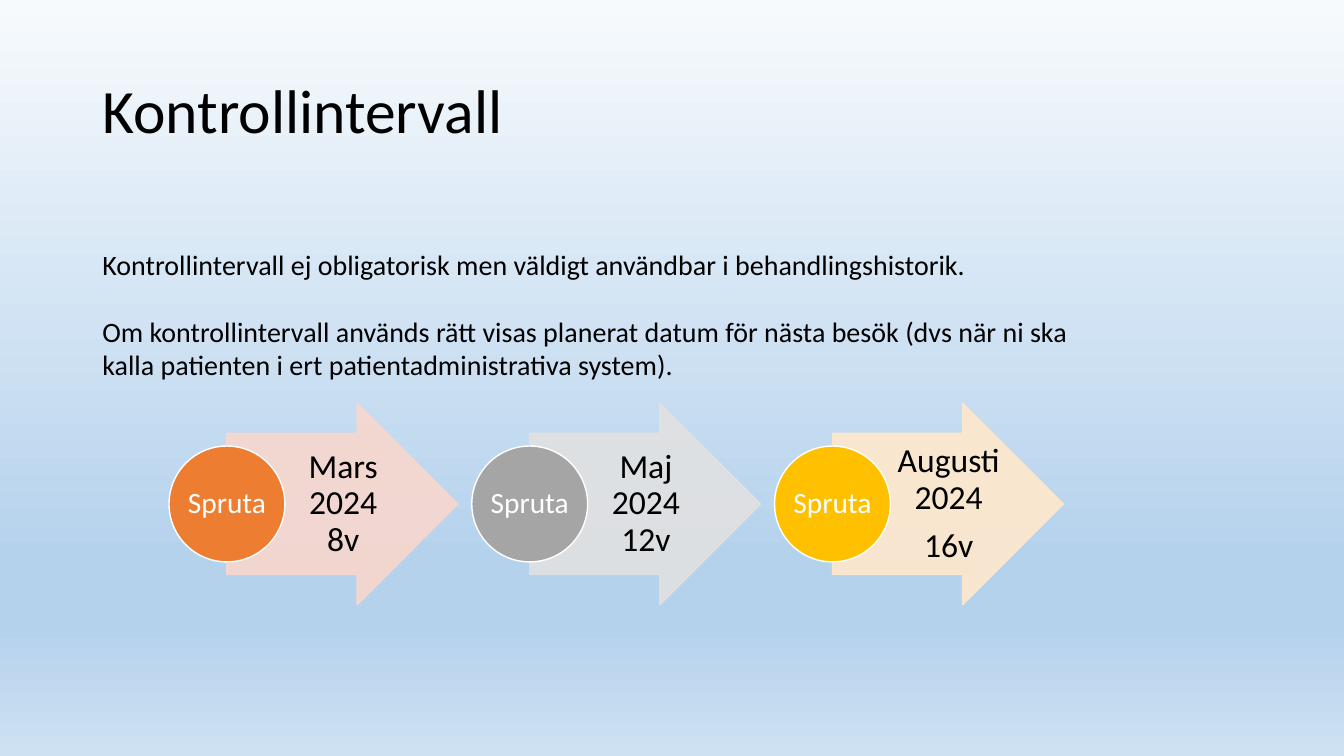
import pptx
import pptx.util
import pptx.dml.color
import pptx.enum.shapes
import pptx.enum.text
import pptx.oxml
import pptx.oxml.ns

Cm, Pt = pptx.util.Cm, pptx.util.Pt
Shape = pptx.enum.shapes.MSO_SHAPE
Anchor = pptx.enum.text.MSO_ANCHOR
Align = pptx.enum.text.PP_ALIGN

TITLE = ["Kontrollintervall"]
BODY = [
    "Kontrollintervall ej obligatorisk men väldigt användbar i behandlingshistorik.",
    "Om kontrollintervall används rätt visas planerat datum för nästa besök "
    "(dvs när ni ska kalla patienten i ert patientadministrativa system).",
]
# paragraphs, arrow colour, circle colour
VISITS = [
    (["Mars 2024\n8v"], "F8D7CE", "ED7D31"),
    (["Maj 2024\n12v"], "E1E1E1", "A5A5A5"),
    (["Augusti 2024", "16v"], "FFE8CC", "FFC000"),
]
BADGE = ["Spruta"]

THEME = {
    "font": "Calibri",
    "ink": "000000",
    "light": "FFFFFF",
    "title": 44,
    "body": 20,
    "visit": 24,
    "badge": 21,
    "alpha": 90,
    "sky": [(0, "F7FAFD"), (74, "B5D2EC"), (83, "B5D2EC"), (100, "CEE1F2")],
}

# centimetres
LEFT, PITCH, MIDDLE = 5.72, 7.63, 12.7
ARROW = (5.82, 5.08)
LABEL = (2.85, 3.56)
ROUND = 2.92
INNER = 2.06


def rgb(code):
    return pptx.dml.color.RGBColor.from_string(code)


def assign(item, values):
    for name, value in values.items():
        setattr(item, name, value)


def paint(slide):
    """Fill the background with the vertical sky gradient."""
    fill = slide.background.fill
    fill.gradient()
    fill.gradient_angle = 270
    stops = slide.element.find(".//" + pptx.oxml.ns.qn("a:gsLst"))
    for stop in list(stops):
        stops.remove(stop)
    for place, code in THEME["sky"]:
        stops.append(pptx.oxml.parse_xml(
            f'<a:gs {pptx.oxml.ns.nsdecls("a")} pos="{place * 1000}">'
            f'<a:srgbClr val="{code}"/></a:gs>'))


def write(slide, box, lines, size, color="ink", frame=None, para=None):
    """Add a text box with one paragraph per line."""
    text = slide.shapes.add_textbox(*map(Cm, box)).text_frame
    assign(text, {"word_wrap": True, **(frame or {})})
    for index, line in enumerate(lines):
        item = text.paragraphs[0] if index == 0 else text.add_paragraph()
        item.text = line
        assign(item, para or {})
        for run in item.runs:
            assign(run.font, {"name": THEME["font"], "size": Pt(THEME[size])})
            run.font.color.rgb = rgb(THEME[color])
    return text


def draw(slide, kind, box, fill, line):
    shape = slide.shapes.add_shape(kind, *map(Cm, box))
    shape.shadow.inherit = False
    shape.fill.solid()
    shape.fill.fore_color.rgb = rgb(fill)
    shape.line.color.rgb = rgb(line)
    shape.line.width = Pt(1)
    return shape


def fade(shape):
    """Make fill and line slightly transparent."""
    for color in shape.element.spPr.iter(pptx.oxml.ns.qn("a:srgbClr")):
        color.append(pptx.oxml.parse_xml(
            f'<a:alpha {pptx.oxml.ns.nsdecls("a")} val="{THEME["alpha"] * 1000}"/>'))


def inset(left, top, right, bottom):
    names = ("margin_left", "margin_top", "margin_right", "margin_bottom")
    sides = dict(zip(names, map(Cm, (left, top, right, bottom))))
    return {"vertical_anchor": Anchor.MIDDLE, **sides}


def center(x, wide, high):
    """Box at x, centred on the row of arrows."""
    return x, MIDDLE - high / 2, wide, high


def visit(slide, x, lines, pale, strong):
    arrow = draw(slide, Shape.RIGHT_ARROW, center(x, *ARROW), pale, pale)
    arrow.adjustments[0] = 0.7
    arrow.adjustments[1] = 0.5
    fade(arrow)
    para = {"alignment": Align.CENTER, "line_spacing": 0.9, "space_after": Pt(8.4)}
    write(slide, center(x + ROUND / 2, *LABEL), lines, "visit",
          frame=inset(0.17, 0.04, 0.08, 0.04), para=para)
    draw(slide, Shape.OVAL, center(x - ROUND / 2, ROUND, ROUND), strong, THEME["light"])
    write(slide, center(x - INNER / 2, INNER, INNER), BADGE, "badge", "light",
          inset(0.03, 0.03, 0.03, 0.03), para)


def main():
    deck = pptx.Presentation()
    assign(deck, {"slide_width": Cm(33.87), "slide_height": Cm(19.05)})
    slide = deck.slides.add_slide(deck.slide_layouts[6])
    paint(slide)
    write(slide, (2.33, 1.01, 29.21, 3.68), TITLE, "title",
          frame={"vertical_anchor": Anchor.MIDDLE}, para={"line_spacing": 0.9})
    body = write(slide, (2.33, 6.1, 26.06, 5.2), BODY, "body")
    body.paragraphs[1].space_before = Pt(24)
    for index, (lines, pale, strong) in enumerate(VISITS):
        visit(slide, LEFT + index * PITCH, lines, pale, strong)
    deck.save("out.pptx")


if __name__ == "__main__":
    main()
